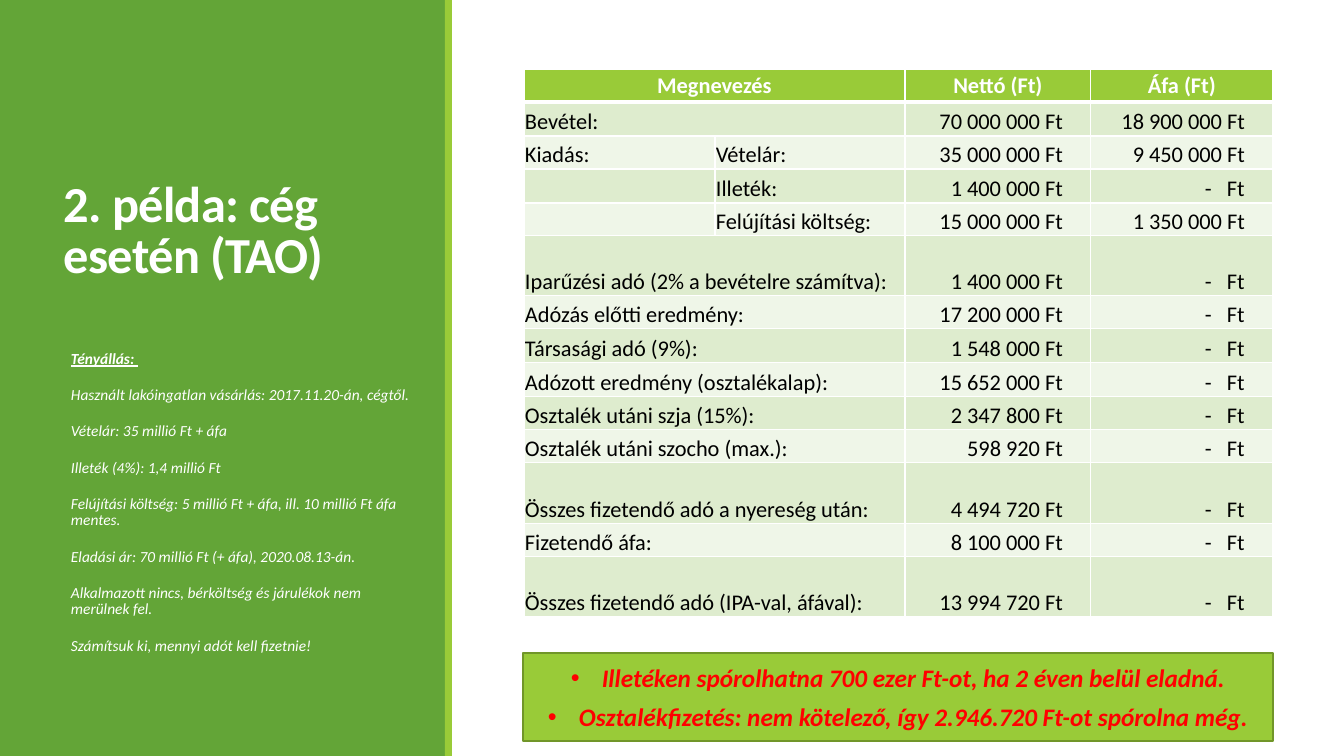
import pptx
import pptx.dml.color
import pptx.enum.shapes
import pptx.enum.text
import pptx.oxml
import pptx.oxml.ns
import pptx.util

EMU_PER_PX = 914400 / 100.8
COLORS = {
    "panel": "63A537",
    "accent": "99CB38",
    "accent_line": "719629",
    "band_dark": "DEECCE",
    "band_light": "EFF6E8",
    "white": "FFFFFF",
    "black": "000000",
    "red": "FF0000",
}
ALIGN = pptx.enum.text.PP_ALIGN
ANCHOR = pptx.enum.text.MSO_ANCHOR
NAMESPACE = pptx.oxml.ns.nsdecls("a")


def px(*lengths):
    """Turn pixel lengths into EMU; a single length gives a single value."""
    values = [pptx.util.Emu(round(length * EMU_PER_PX)) for length in lengths]
    return values if len(values) > 1 else values[0]


def add_run(paragraph, text, size, color, bold=False, italic=False):
    run = paragraph.add_run()
    run.text = text
    run.font.name = "Calibri"
    run.font.size = pptx.util.Pt(size)
    run.font.bold = bold
    run.font.italic = italic
    run.font.color.rgb = pptx.dml.color.RGBColor.from_string(COLORS[color])
    return run


presentation = pptx.Presentation()
presentation.slide_width, presentation.slide_height = px(1344, 756)
slide = presentation.slides.add_slide(presentation.slide_layouts[6])

# Side panel, its edge stripe and the note box
rectangles = []
for box, color in [
    ((0, 0, 446, 756), "panel"),
    ((445, 0, 7, 756), "accent"),
    ((523, 653, 750, 88), "accent"),
]:
    shape = slide.shapes.add_shape(pptx.enum.shapes.MSO_SHAPE.RECTANGLE, *px(*box))
    shape.shadow.inherit = False
    shape.fill.solid()
    shape.fill.fore_color.rgb = pptx.dml.color.RGBColor.from_string(COLORS[color])
    shape.line.fill.background()
    rectangles.append(shape)

# Title
title = slide.shapes.add_textbox(*px(54, 57, 340, 232)).text_frame
title.word_wrap = True
title.vertical_anchor = ANCHOR.BOTTOM
paragraph = title.paragraphs[0]
paragraph.line_spacing = 0.85
run = add_run(paragraph, "2. példa: cég esetén (TAO)", 36, "white", bold=True)
run.font._element.set("spc", "-50")

# Facts of the case
facts = slide.shapes.add_textbox(*px(71, 346, 344, 331)).text_frame
facts.word_wrap = True
facts.margin_left = facts.margin_right = 0
for index, text in enumerate([
    "Tényállás: ",
    "Használt lakóingatlan vásárlás: 2017.11.20-án, cégtől.",
    "Vételár: 35 millió Ft + áfa",
    "Illeték (4%): 1,4 millió Ft",
    "Felújítási költség: 5 millió Ft + áfa, ill. 10 millió Ft áfa mentes.",
    "Eladási ár: 70 millió Ft (+ áfa), 2020.08.13-án.",
    "Alkalmazott nincs, bérköltség és járulékok nem merülnek fel.",
    "Számítsuk ki, mennyi adót kell fizetnie!",
]):
    heading = index == 0
    paragraph = facts.paragraphs[0] if heading else facts.add_paragraph()
    paragraph.line_spacing = 0.9
    paragraph.space_before = pptx.util.Pt(0 if heading else 12)
    paragraph.space_after = pptx.util.Pt(2)
    run = add_run(paragraph, text, 11, "white", bold=heading, italic=True)
    run.font.underline = heading

# Note box
note_shape = rectangles[-1]
note_shape.line.color.rgb = pptx.dml.color.RGBColor.from_string(COLORS["accent_line"])
note_shape.line.width = pptx.util.Pt(1.25)
note = note_shape.text_frame
note.word_wrap = True
note.vertical_anchor = ANCHOR.MIDDLE
for index, text in enumerate([
    "Illetéken spórolhatna 700 ezer Ft-ot, ha 2 éven belül eladná.",
    "Osztalékfizetés: nem kötelező, így 2.946.720 Ft-ot spórolna még.",
]):
    paragraph = note.add_paragraph() if index else note.paragraphs[0]
    paragraph.alignment = ALIGN.CENTER
    paragraph.space_after = pptx.util.Pt(6)
    properties = paragraph._p.get_or_add_pPr()
    properties.set("marL", str(px(31)))
    properties.set("indent", str(-px(31)))
    for bullet in ('<a:buFont %s typeface="Arial"/>', '<a:buChar %s char="•"/>'):
        properties.append(pptx.oxml.parse_xml(bullet % NAMESPACE))
    add_run(paragraph, text, 18, "red", bold=True, italic=True)

# Tax table: name, sub-item (None when the name spans both columns), net, VAT
NO_VAT = "-\tFt"
rows = [
    ("Megnevezés", None, "Nettó (Ft)", "Áfa (Ft)"),
    ("Bevétel:", None, "70 000 000 Ft", "18 900 000 Ft"),
    ("Kiadás:", "Vételár:", "35 000 000 Ft", "9 450 000 Ft"),
    ("", "Illeték:", "1 400 000 Ft", NO_VAT),
    ("", "Felújítási költség:", "15 000 000 Ft", "1 350 000 Ft"),
    ("Iparűzési adó (2% a bevételre számítva):", None, "1 400 000 Ft", NO_VAT),
    ("Adózás előtti eredmény:", None, "17 200 000 Ft", NO_VAT),
    ("Társasági adó (9%):", None, "1 548 000 Ft", NO_VAT),
    ("Adózott eredmény (osztalékalap):", None, "15 652 000 Ft", NO_VAT),
    ("Osztalék utáni szja (15%):", None, "2 347 800 Ft", NO_VAT),
    ("Osztalék utáni szocho (max.):", None, "598 920 Ft", NO_VAT),
    ("Összes fizetendő adó a nyereség után:", None, "4 494 720 Ft", NO_VAT),
    ("Fizetendő áfa:", None, "8 100 000 Ft", NO_VAT),
    ("Összes fizetendő adó (IPA-val, áfával):", None, "13 994 720 Ft", NO_VAT),
]
column_widths = [191, 190, 186, 182]
row_heights = [33, 34, 33, 34, 33, 60, 33, 34, 34, 33, 33, 61, 33, 60]
table = slide.shapes.add_table(
    len(rows), len(column_widths), *px(524, 69, sum(column_widths), sum(row_heights))
).table
table.first_row = table.horz_banding = False
for column, width in zip(table.columns, column_widths):
    column.width = px(width)

for row_index, values in enumerate(rows):
    table.rows[row_index].height = px(row_heights[row_index])
    header = row_index == 0
    band = "accent" if header else ("band_light", "band_dark")[row_index % 2]
    if values[1] is None:
        table.cell(row_index, 0).merge(table.cell(row_index, 1))
    for column_index, text in enumerate(values):
        cell = table.cell(row_index, column_index)
        cell.margin_left = cell.margin_right = cell.margin_top = px(1)
        cell.margin_bottom = 0
        cell.vertical_anchor = ANCHOR.MIDDLE if header else ANCHOR.BOTTOM
        for side in "LRTB":
            thick = (header and side == "B") or (row_index == 1 and side == "T")
            cell._tc.get_or_add_tcPr().append(pptx.oxml.parse_xml(
                f'<a:ln{side} {NAMESPACE} w="{pptx.util.Pt(3 if thick else 1)}"><a:solidFill>'
                f'<a:srgbClr val="{COLORS["white"]}"/></a:solidFill></a:ln{side}>'))
        cell.fill.solid()
        cell.fill.fore_color.rgb = pptx.dml.color.RGBColor.from_string(COLORS[band])
        paragraph = cell.text_frame.paragraphs[0]
        if not text:
            paragraph.font.size = pptx.util.Pt(16)
            continue
        if header:
            paragraph.alignment = ALIGN.CENTER
        elif text == NO_VAT:
            cell.margin_left = px(114)
            paragraph._p.get_or_add_pPr().append(pptx.oxml.parse_xml(
                f'<a:tabLst {NAMESPACE}><a:tab pos="{px(22)}" algn="l"/></a:tabLst>'))
        elif column_index >= 2:
            paragraph.alignment = ALIGN.RIGHT
            cell.margin_right = px(28)
        add_run(paragraph, text, 16, "white" if header else "black", bold=header)

presentation.save("out.pptx")
